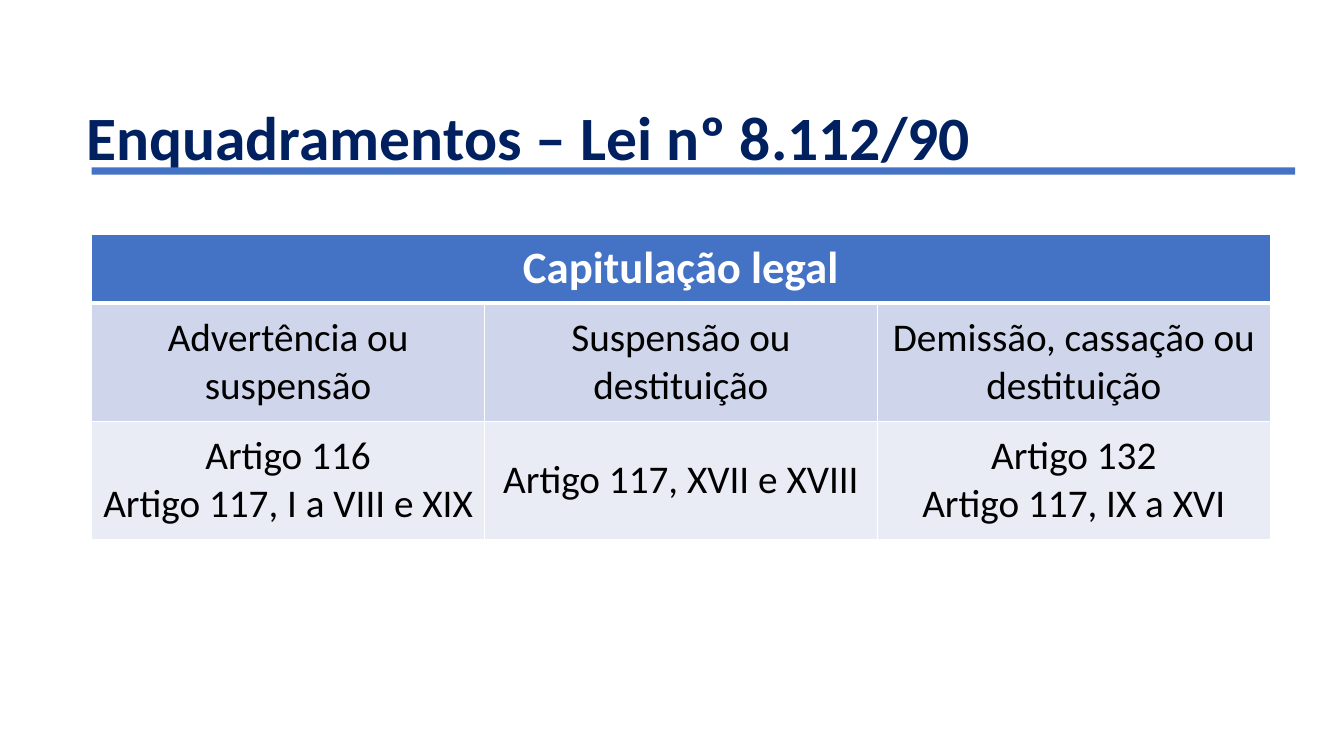
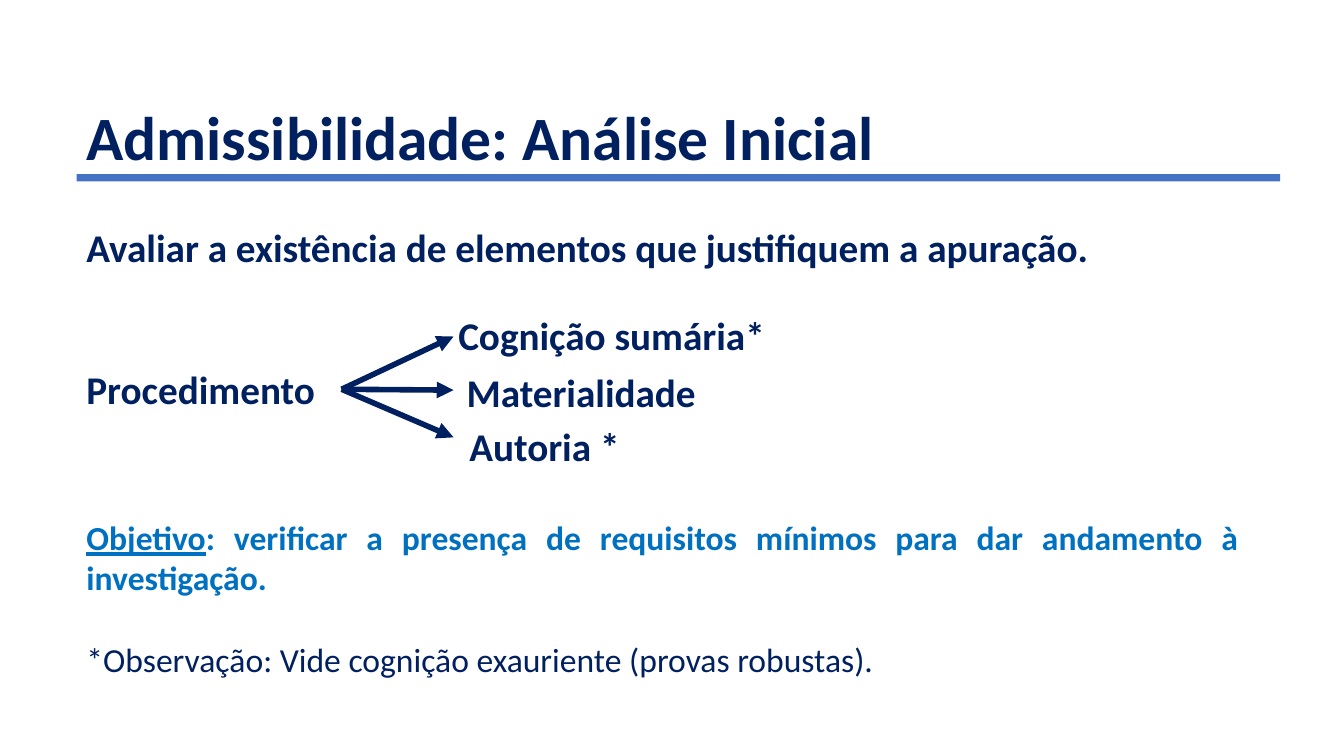
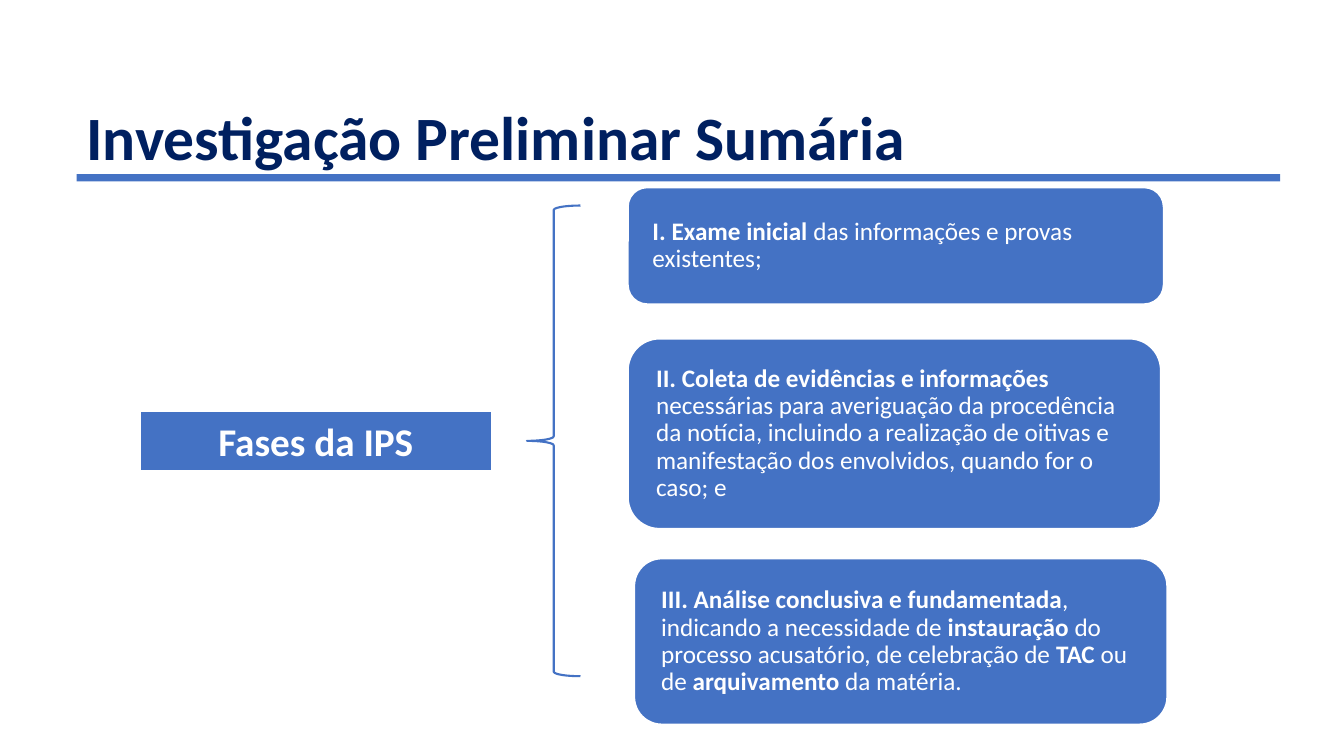
from collections import namedtuple

from lxml import etree
from pptx import Presentation
from pptx import util as u
from pptx.dml.color import RGBColor
from pptx.enum import shapes, text
from pptx.oxml.ns import qn

NAVY, BLUE, SKY = "002060", "4472C4", "0070C0"
WHITE, BLACK = "FFFFFF", "000000"
ROW_FILLS = ["CFD5EA", "E9EBF5"]
FONT = "Calibri"
MARGIN = 1.93
LINE_HEIGHT = 1.45
INSETS = (0.25, 0.13, 0.25, 0.13)

Box = namedtuple("Box", "left top width height")


def rgb(value):
    return RGBColor.from_string(value)


def lengths(*values):
    return [u.Cm(value) for value in values]


def write(frame, *paras, size=28, color=NAVY, bold=True, align="LEFT",
          anchor="TOP", insets=INSETS, spacing=1.0, gap=0):
    """Fill a frame; a paragraph is a string or a list of (text, format) spans."""
    frame.word_wrap = True
    frame.auto_size = text.MSO_AUTO_SIZE.NONE
    frame.vertical_anchor = getattr(text.MSO_ANCHOR, anchor)
    (frame.margin_left, frame.margin_top,
     frame.margin_right, frame.margin_bottom) = lengths(*insets)
    for index, spans in enumerate(paras):
        para = frame.add_paragraph() if index else frame.paragraphs[0]
        para.alignment = getattr(text.PP_ALIGN, align)
        para.line_spacing = spacing
        para.space_before = u.Pt(gap if index else 0)
        for words, changes in [(spans, {})] if isinstance(spans, str) else spans:
            span = para.add_run()
            span.text = words
            span.font.name = FONT
            span.font.size = u.Pt(size)
            span.font.bold = changes.get("bold", bold)
            span.font.underline = changes.get("underline", False)
            span.font.color.rgb = rgb(changes.get("color", color))


def add_label(page, box, *paras, **style):
    label = page.shapes.add_textbox(*lengths(*box))
    write(label.text_frame, *paras, **style)


def add_block(page, kind, box, fill=None, line=None):
    block = page.shapes.add_shape(kind, *lengths(*box))
    block.shadow.inherit = False
    if fill:
        block.fill.solid()
        block.fill.fore_color.rgb = rgb(fill)
    else:
        block.fill.background()
    if line:
        block.line.color.rgb = rgb(line)
        block.line.width = u.Pt(1.5)
    else:
        block.line.fill.background()
    return block


def add_arrow(page, start, end):
    arrow = page.shapes.add_connector(
        shapes.MSO_CONNECTOR.STRAIGHT, *lengths(*start, *end))
    arrow.line.color.rgb = rgb(NAVY)
    arrow.line.width = u.Pt(4)
    etree.SubElement(arrow.line._get_or_add_ln(), qn("a:tailEnd"), type="triangle")
    etree.SubElement(arrow._element.spPr, qn("a:effectLst"))


def add_page(deck, title, rule_left=MARGIN, rule_top=4.39):
    """Add a slide with the shared title and the blue rule under it."""
    page = deck.slides.add_slide(deck.slide_layouts[5])
    heading = page.shapes.title
    (heading.left, heading.top,
     heading.width, heading.height) = lengths(MARGIN, 2.36, 29.5, 2.13)
    write(heading.text_frame, title, size=44)
    add_block(page, shapes.MSO_SHAPE.RECTANGLE,
              Box(rule_left, rule_top, 30.33, 0.18), fill=BLUE)
    return page


def set_borders(cell, bottom):
    properties = cell._tc.get_or_add_tcPr()
    widths = {"a:lnL": 1, "a:lnR": 1, "a:lnT": 1, "a:lnB": bottom}
    for index, (side, width) in enumerate(widths.items()):
        border = etree.Element(qn(side), w=str(u.Pt(width)))
        fill = etree.SubElement(border, qn("a:solidFill"))
        etree.SubElement(fill, qn("a:srgbClr"), val=WHITE)
        properties.insert(index, border)


def add_framing_table(page, box, header, rows, header_height):
    count = len(rows[0])
    table = page.shapes.add_table(len(rows) + 1, count, *lengths(*box)).table
    for column in table.columns:
        column.width = u.Cm(box.width / count)
    for row in table.rows:
        row.height = u.Cm((box.height - header_height) / len(rows))
    table.rows[0].height = u.Cm(header_height)
    table.cell(0, 0).merge(table.cell(0, count - 1))
    for index, row in enumerate(table.rows):
        for cell in row.cells:
            cell.fill.solid()
            cell.fill.fore_color.rgb = rgb(ROW_FILLS[index - 1] if index else BLUE)
            cell.vertical_anchor = text.MSO_ANCHOR.MIDDLE
            set_borders(cell, bottom=1 if index else 3)
    write_cell(table.cell(0, 0), [header], size=32, color=WHITE, bold=True)
    for index, entries in enumerate(rows, 1):
        for column, lines in enumerate(entries):
            write_cell(table.cell(index, column), lines, color=BLACK, bold=False)


def write_cell(cell, lines, **style):
    write(cell.text_frame, *lines, align="CENTER", **style)
    # A cell takes its anchor and margins from itself, not from its text body.
    body = cell.text_frame._txBody.bodyPr
    body.attrib.clear()
    for child in list(body):
        body.remove(child)


def add_fan(page, box, source, targets):
    """Join a source label by arrows to targets of (text, left, top, arrow end)."""
    add_label(page, Box(box.left, box.top + 1.35, 6.73, LINE_HEIGHT), source)
    origin = (box.left + 6.68, box.top + 2.09)
    for words, left, top, end in targets:
        add_arrow(page, origin, (box.left + 9.5, box.top + end))
        add_label(page, Box(box.left + left, box.top + top, 8.76, LINE_HEIGHT), words)


def add_phases(page, box, name, phases):
    """Place a name, a brace and phases of (left, top, width, height, spans)."""
    tag = add_block(page, shapes.MSO_SHAPE.RECTANGLE,
                    Box(box.left, box.top + 5.64, 8.86, 1.5), BLUE, WHITE)
    write(tag.text_frame, name, color=WHITE, align="CENTER", anchor="MIDDLE")
    add_block(page, shapes.MSO_SHAPE.LEFT_BRACE,
              Box(box.left + 9.75, box.top + 0.46, 1.35, 11.86), line=BLUE)
    for left, top, width, height, spans in phases:
        card = add_block(page, shapes.MSO_SHAPE.ROUNDED_RECTANGLE,
                         Box(box.left + left, box.top + top, width, height),
                         BLUE, WHITE)
        write(card.text_frame, spans, size=18, color=WHITE, bold=False,
              anchor="MIDDLE", insets=(0.48, 0, 0.48, 0), spacing=0.9)


def build_framing(deck):
    page = add_page(deck, "Enquadramentos – Lei nº 8.112/90", 2.31, 4.22)
    rows = [
        [["Advertência ou suspensão"], ["Suspensão ou destituição"],
         ["Demissão, cassação ou destituição"]],
        [["Artigo 116", "Artigo 117, I a VIII e XIX"],
         ["Artigo 117, XVII e XVIII"],
         ["Artigo 132", "Artigo 117, IX a XVI"]],
    ]
    add_framing_table(page, Box(2.31, 5.9, 29.7, 7.7), "Capitulação legal", rows, 1.73)


def build_analysis(deck):
    page = add_page(deck, "Admissibilidade: Análise Inicial")
    add_label(page, Box(MARGIN, 5.51, 27, LINE_HEIGHT),
              "Avaliar a existência de elementos que justifiquem a apuração.")
    add_fan(page, Box(MARGIN, 7.72, 18.5, 4.3), "Procedimento", [
        ("Cognição sumária*", 9.37, 0, 0.76),
        ("Materialidade", 9.58, 1.42, 2.11),
        ("Autoria *", 9.65, 2.8, 3.3),
    ])
    goal = [("Objetivo", {"underline": True}),
            (": verificar a presença de requisitos mínimos para dar "
             "andamento à investigação.", {})]
    note = [("*Observação: Vide cognição exauriente (provas robustas).",
             {"color": NAVY, "bold": False})]
    add_label(page, Box(MARGIN, 12.9, 29.54, 5.56), goal, note,
              size=24, color=SKY, align="JUSTIFY", gap=29.3)


def build_phases(deck):
    page = add_page(deck, "Investigação Preliminar Sumária")
    strong = {"bold": True}
    add_phases(page, Box(3.53, 4.72, 25.9, 13.54), "Fases da IPS", [
        (12.29, 0, 13.51, 2.95, [
            ("I. Exame inicial ", strong),
            ("das informações e provas existentes;", {})]),
        (12.29, 3.81, 13.44, 4.8, [
            ("II. Coleta de evidências e informações", strong),
            (" necessárias para averiguação da procedência da notícia, "
             "incluindo a realização de oitivas e manifestação dos "
             "envolvidos, quando for o caso; e", {})]),
        (12.45, 9.35, 13.44, 4.19, [
            ("III. Análise conclusiva e fundamentada", strong),
            (", indicando a necessidade de ", {}),
            ("instauração", strong),
            (" do processo acusatório, de celebração de ", {}),
            ("TAC", strong),
            (" ou de ", {}),
            ("arquivamento", strong),
            (" da matéria.", {})]),
    ])


def main():
    deck = Presentation()
    deck.slide_width, deck.slide_height = lengths(33.87, 19.05)
    build_framing(deck)
    build_analysis(deck)
    build_phases(deck)
    deck.save("out.pptx")


if __name__ == "__main__":
    main()
